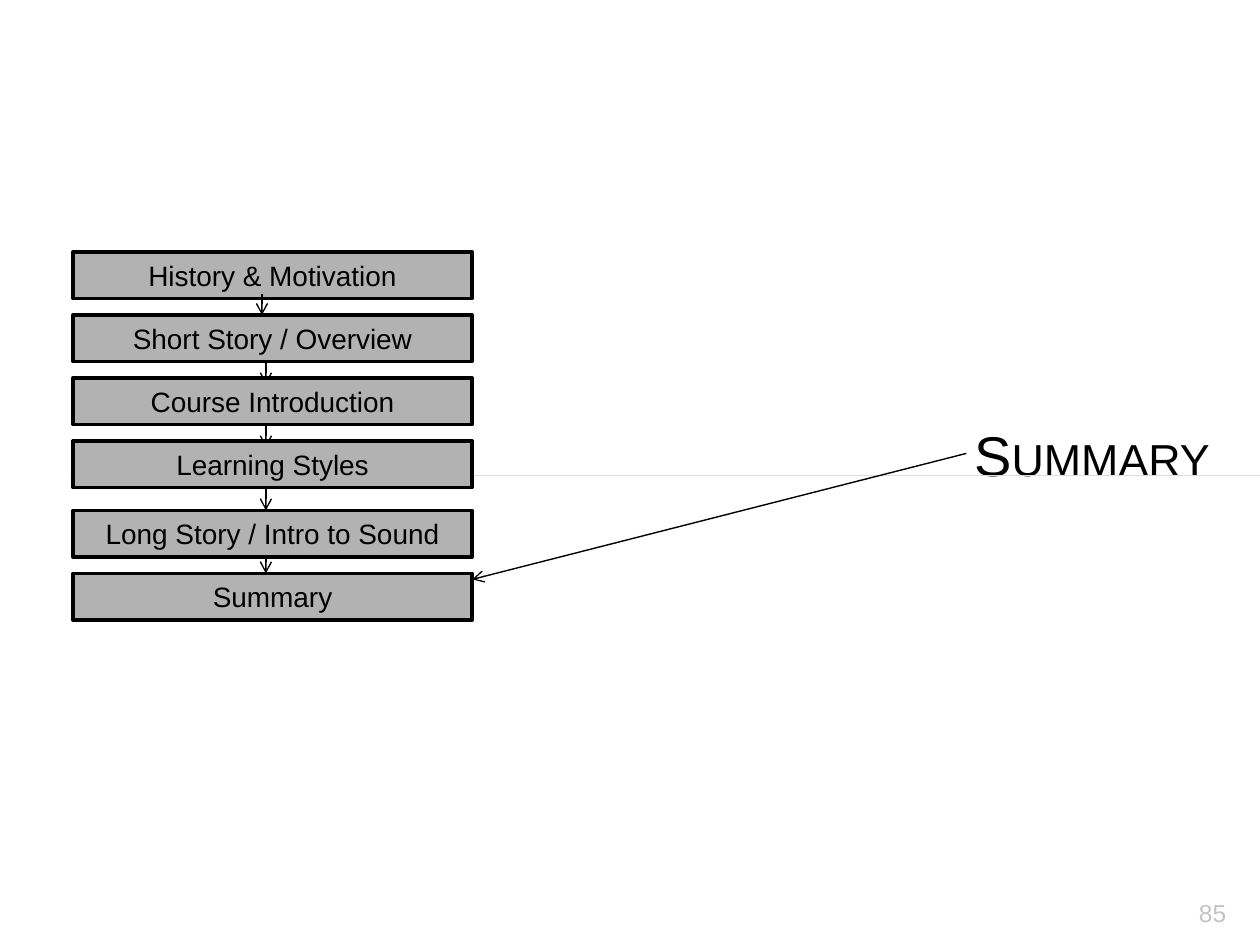
import dataclasses

import pptx
import pptx.dml.color
import pptx.enum.shapes
import pptx.enum.text
import pptx.oxml.ns
import pptx.util
from lxml import etree

Cm = pptx.util.Cm
Pt = pptx.util.Pt
RGB = pptx.dml.color.RGBColor
Align = pptx.enum.text.PP_ALIGN
Anchor = pptx.enum.text.MSO_ANCHOR


@dataclasses.dataclass(frozen=True)
class Theme:
    font: str = "Arial"
    ink: RGB = RGB(0x00, 0x00, 0x00)
    box_fill: RGB = RGB(0xB2, 0xB2, 0xB2)
    rule: RGB = RGB(0xDD, 0xDD, 0xDD)
    page_number: RGB = RGB(0xC3, 0xC3, 0xC3)
    title_size: Pt = Pt(32)
    box_size: Pt = Pt(16)
    page_number_size: Pt = Pt(14)
    box_line: Pt = Pt(2)
    arrow_line: Pt = Pt(0.79)
    rule_line: Pt = Pt(0.75)


theme = Theme()


def write_text(shape, text, *, size, color=theme.ink, align=Align.RIGHT,
               anchor=Anchor.MIDDLE, wrap=True, small_caps=False):
    frame = shape.text_frame
    frame.word_wrap = wrap
    frame.auto_size = pptx.enum.text.MSO_AUTO_SIZE.NONE
    frame.vertical_anchor = anchor
    paragraph = frame.paragraphs[0]
    paragraph.alignment = align
    run = paragraph.add_run()
    run.text = text
    run.font.name = theme.font
    run.font.size = size
    run.font.color.rgb = color
    if small_caps:
        run._r.get_or_add_rPr().set("cap", "small")


def draw_line(start, end, *, color=theme.ink, width=theme.arrow_line, arrow=True):
    """Draw a straight line between two (x, y) points in centimetres."""
    connector = slide.shapes.add_connector(
        pptx.enum.shapes.MSO_CONNECTOR.STRAIGHT,
        Cm(start[0]), Cm(start[1]), Cm(end[0]), Cm(end[1]))
    connector.line.color.rgb = color
    connector.line.width = width
    if arrow:
        outline = connector.line._get_or_add_ln()
        etree.SubElement(outline, pptx.oxml.ns.qn("a:tailEnd"), type="arrow")
    etree.SubElement(connector._element.spPr, pptx.oxml.ns.qn("a:effectLst"))


presentation = pptx.Presentation()
presentation.slide_width = Cm(25.4)
presentation.slide_height = Cm(19.05)
slide = presentation.slides.add_slide(presentation.slide_layouts[5])

draw_line((1.42, 9.58), (25.4, 9.58), color=theme.rule, width=theme.rule_line, arrow=False)

page_number = slide.shapes.add_textbox(Cm(22.86), Cm(17.98), Cm(2.11), Cm(0.69))
write_text(page_number, "85", size=theme.page_number_size,
           color=theme.page_number, anchor=Anchor.TOP)

title = slide.shapes.title
title.left, title.top, title.width, title.height = Cm(12.5), Cm(8.18), Cm(12.14), Cm(1.93)
write_text(title, "Summary", size=theme.title_size, small_caps=True)

# Outline of the talk: evenly stepped boxes, the last two set slightly lower
topics = ["History & Motivation", "Short Story / Overview", "Course Introduction",
          "Learning Styles", "Long Story / Intro to Sound", "Summary"]
box_left, box_width, box_height = 1.47, 8.05, 0.94
first_top, step, lower_offset = 5.08, 1.27, 0.13
arrow_length = 0.43

draw_line((19.48, 9.14), (box_left + box_width, 11.68))
for index in range(1, len(topics) - 1):
    arrow_top = 6.05 + index * step
    draw_line((5.36, arrow_top), (5.36, arrow_top + arrow_length))

for index, topic in enumerate(topics):
    top = first_top + index * step + (lower_offset if index >= 4 else 0)
    box = slide.shapes.add_shape(
        pptx.enum.shapes.MSO_SHAPE.RECTANGLE,
        Cm(box_left), Cm(top), Cm(box_width), Cm(box_height))
    box.shadow.inherit = False
    box.fill.solid()
    box.fill.fore_color.rgb = theme.box_fill
    box.line.color.rgb = theme.ink
    box.line.width = theme.box_line
    write_text(box, topic, size=theme.box_size, align=Align.CENTER, wrap=False)

# The first arrow starts inside its box, so it lies on top
second_top = first_top + step
draw_line((5.28, second_top - arrow_length), (5.28, second_top))

presentation.save("out.pptx")
